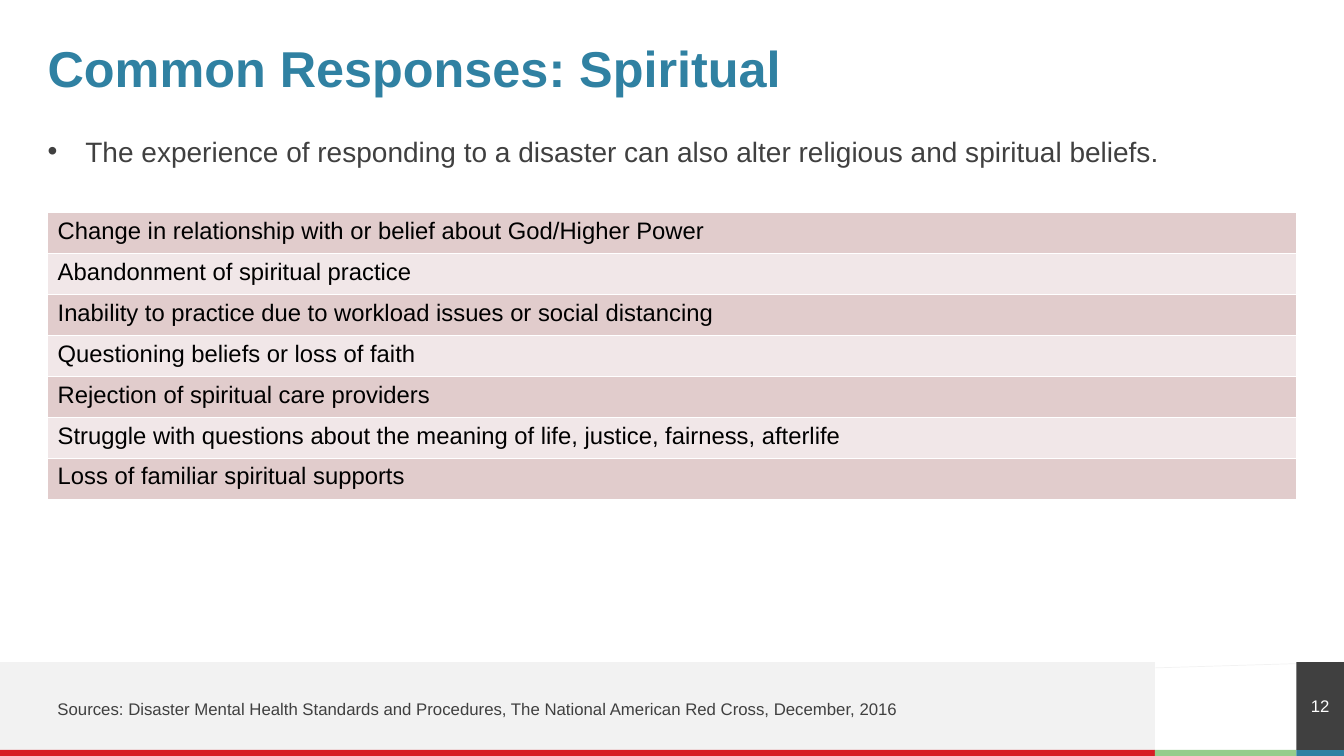
from dataclasses import dataclass

from lxml import etree
from pptx import Presentation
from pptx.dml.color import RGBColor
from pptx.enum import shapes, text
from pptx.oxml import ns
from pptx.util import Pt


@dataclass(frozen=True)
class Theme:
    font: str = "Arial"
    blue: str = "3081A2"
    red: str = "D71D24"
    green: str = "95CD8B"
    dark: str = "404040"
    pale: str = "F2F2F2"
    white: str = "FFFFFF"
    black: str = "000000"
    bands: tuple = ("E1CCCC", "F1E7E8")
    title_size: float = 36
    body_size: float = 20
    table_size: float = 17
    small_size: float = 12


theme = Theme()
WIDTH, HEIGHT = 960, 540
MARGIN = 34
CONTENT_WIDTH = WIDTH - 2 * MARGIN
FOOTER_TOP, STRIPE_TOP = 473, 535.7
FOOTER_RIGHT, NUMBER_LEFT = 825, WIDTH - MARGIN
ROW_HEIGHT = 29.25


def write(frame, words, size, color, bold=False):
    """Fill a text frame with one styled paragraph and return the paragraph."""
    frame.word_wrap = True
    frame.text = words
    para = frame.paragraphs[0]
    para.space_before = Pt(0)
    para.font.name = theme.font
    para.font.size = Pt(size)
    para.font.bold = bold
    para.font.color.rgb = RGBColor.from_string(color)
    return para


def place(shape, left, top, width, height):
    """Position a placeholder and remove its insets and automatic sizing."""
    shape.left, shape.top, shape.width, shape.height = map(Pt, (left, top, width, height))
    frame = shape.text_frame
    frame.auto_size = text.MSO_AUTO_SIZE.NONE
    frame.margin_left = frame.margin_top = frame.margin_right = frame.margin_bottom = 0
    return frame


deck = Presentation()
deck.slide_width, deck.slide_height = Pt(WIDTH), Pt(HEIGHT)
page = deck.slides.add_slide(deck.slide_layouts[1])

# Title and introduction
title_frame = place(page.shapes.title, MARGIN, 34, CONTENT_WIDTH, 34)
title_frame.vertical_anchor = text.MSO_ANCHOR.MIDDLE
para = write(title_frame, "Common Responses: Spiritual", theme.title_size, theme.blue, True)
para.alignment = text.PP_ALIGN.LEFT
para.line_spacing = 0.9

body_frame = place(page.placeholders[1], MARGIN, 96, CONTENT_WIDTH, 348)
body_frame.text = ""
properties = body_frame.paragraphs[0]._p.get_or_add_pPr()
properties.set("marL", "0")
properties.set("indent", "0")
etree.SubElement(properties, ns.qn("a:buNone"))
write(
    body_frame,
    "The experience of responding to a disaster can also alter religious and spiritual beliefs.",
    theme.body_size,
    theme.dark,
)

# Footer bands and slide number
rule = page.shapes.add_connector(
    shapes.MSO_CONNECTOR.STRAIGHT, Pt(WIDTH), Pt(FOOTER_TOP), Pt(0), Pt(502)
)
rule.line.color.rgb = RGBColor.from_string(theme.pale)
rule.line.width = Pt(0.5)
etree.SubElement(rule._element.spPr, ns.qn("a:effectLst"))

footer_blocks = [
    (0, FOOTER_TOP, FOOTER_RIGHT, STRIPE_TOP, theme.pale),
    (0, STRIPE_TOP, FOOTER_RIGHT, HEIGHT, theme.red),
    (FOOTER_RIGHT, STRIPE_TOP, NUMBER_LEFT, HEIGHT, theme.green),
    (NUMBER_LEFT, STRIPE_TOP, WIDTH, HEIGHT, theme.blue),
    (NUMBER_LEFT, FOOTER_TOP, WIDTH, STRIPE_TOP, theme.dark),
]
for left, top, right, bottom, color in footer_blocks:
    block = page.shapes.add_shape(
        shapes.MSO_SHAPE.RECTANGLE, Pt(left), Pt(top), Pt(right - left), Pt(bottom - top)
    )
    block.shadow.inherit = False
    block.fill.solid()
    block.fill.fore_color.rgb = RGBColor.from_string(color)
    block.line.fill.background()

number_frame = place(block, NUMBER_LEFT, FOOTER_TOP, MARGIN, STRIPE_TOP - FOOTER_TOP)
number_frame.vertical_anchor = text.MSO_ANCHOR.MIDDLE
para = write(number_frame, "12", theme.small_size, theme.white)
para.alignment = text.PP_ALIGN.CENTER

# Table of responses
responses = [
    "Change in relationship with or belief about God/Higher Power",
    "Abandonment of spiritual practice",
    "Inability to practice due to workload issues or social distancing",
    "Questioning beliefs or loss of faith",
    "Rejection of spiritual care providers",
    "Struggle with questions about the meaning of life, justice, fairness, afterlife",
    "Loss of familiar spiritual supports",
]
table = page.shapes.add_table(
    len(responses), 1, Pt(MARGIN), Pt(152), Pt(CONTENT_WIDTH), Pt(ROW_HEIGHT * len(responses))
).table
table.first_row = table.horz_banding = False
for index, response in enumerate(responses):
    table.rows[index].height = Pt(ROW_HEIGHT)
    cell = table.cell(index, 0)
    write(cell.text_frame, response, theme.table_size, theme.black)
    cell_properties = cell._tc.get_or_add_tcPr()
    for side in ("lnL", "lnR", "lnT", "lnB"):
        border = etree.SubElement(cell_properties, ns.qn(f"a:{side}"), w=str(Pt(1)))
        fill = etree.SubElement(border, ns.qn("a:solidFill"))
        etree.SubElement(fill, ns.qn("a:srgbClr"), val=theme.white)
    cell.fill.solid()
    cell.fill.fore_color.rgb = RGBColor.from_string(theme.bands[index % 2])

# Sources
sources = page.shapes.add_textbox(Pt(MARGIN), Pt(495.2), Pt(620), Pt(21.6))
write(
    sources.text_frame,
    "Sources: Disaster Mental Health Standards and Procedures, "
    "The National American Red Cross, December, 2016",
    theme.small_size,
    theme.dark,
)

deck.save("out.pptx")
